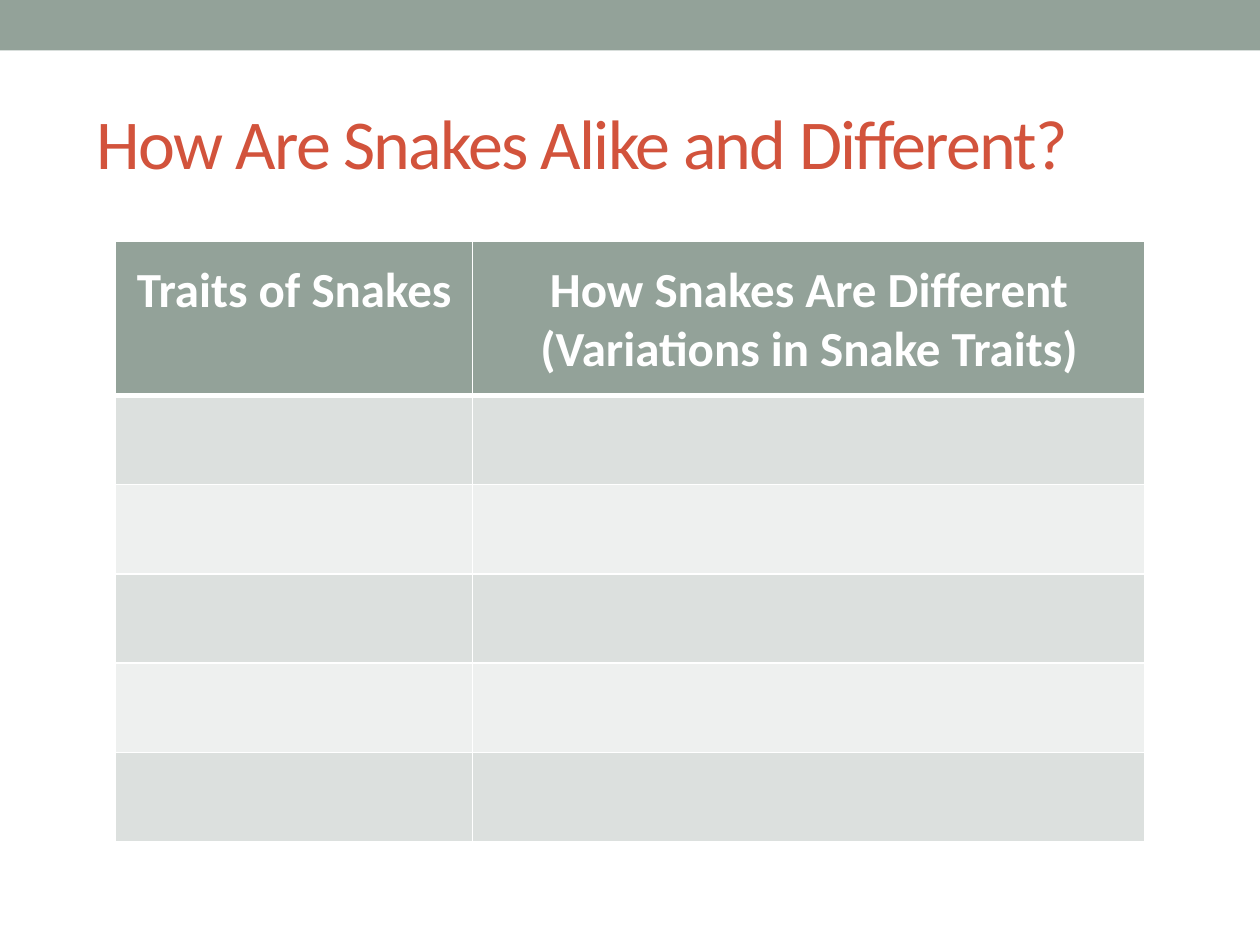
from pptx import Presentation
from pptx.dml.color import RGBColor
from pptx.enum.shapes import MSO_SHAPE
from pptx.enum.text import MSO_ANCHOR, PP_ALIGN
from pptx.oxml import parse_xml
from pptx.oxml.ns import nsdecls
from pptx.util import Cm, Pt


def paint(fill, tone):
    fill.solid()
    fill.fore_color.rgb = RGBColor.from_string(tone)


def edge(cell, sides):
    """Give a cell white borders; sides maps a side to its width in points."""
    props = cell._tc.get_or_add_tcPr()
    for spot, (side, width) in enumerate(sides.items()):
        props.insert(spot, parse_xml(
            f'<a:ln{side} {nsdecls("a")} w="{Pt(width)}"><a:solidFill>'
            f'<a:srgbClr val="FFFFFF"/></a:solidFill></a:ln{side}>'))


SAGE, RUST, WHITE = "93A299", "D2533C", "FFFFFF"
BANDS = ["EEF0EF", "DCE0DE"]

deck = Presentation()
deck.slide_width, deck.slide_height = Cm(25.4), Cm(19.05)
slide = deck.slides.add_slide(deck.slide_layouts[6])

# Top band
band = slide.shapes.add_shape(MSO_SHAPE.RECTANGLE, 0, 0, deck.slide_width, Cm(1.02))
band.shadow.inherit = False
paint(band.fill, SAGE)
band.line.fill.background()

# Title
title = slide.shapes.add_textbox(Cm(1.7), Cm(1.48), Cm(22.43), Cm(2.75))
frame = title.text_frame
frame.word_wrap = True
frame.vertical_anchor = MSO_ANCHOR.MIDDLE
para = frame.paragraphs[0]
run = para.add_run()
run.text = "How Are Snakes Alike and Different?"
run.font._element.set("spc", "-100")
para.font.name, para.font.size = "Calibri", Pt(40)
para.font.color.rgb = RGBColor.from_string(RUST)

# Table grid
widths = [7.2, 13.55]
heights = [3.1] + [1.8] * 5
grid = slide.shapes.add_table(len(heights), len(widths), Cm(2.33), Cm(4.87),
                              Cm(sum(widths)), Cm(sum(heights))).table
for col, width in zip(grid.columns, widths):
    col.width = Cm(width)
for num, (row, height) in enumerate(zip(grid.rows, heights)):
    row.height = Cm(height)
    for cell in row.cells:
        paint(cell.fill, BANDS[num % 2] if num else SAGE)
        edge(cell, {"L": 1, "R": 1, "T": 1 if num != 1 else 3, "B": 1 if num else 3})

# Header text
heads = ["Traits of Snakes", "How Snakes Are Different\n(Variations in Snake Traits)"]
for cell, text in zip(grid.rows[0].cells, heads):
    cell.margin_top = Cm(0.38)
    cell.text_frame.text = text
    for para in cell.text_frame.paragraphs:
        para.alignment = PP_ALIGN.CENTER
        para.font.name, para.font.size, para.font.bold = "Calibri", Pt(28), True
        para.font.color.rgb = RGBColor.from_string(WHITE)

deck.save("out.pptx")
